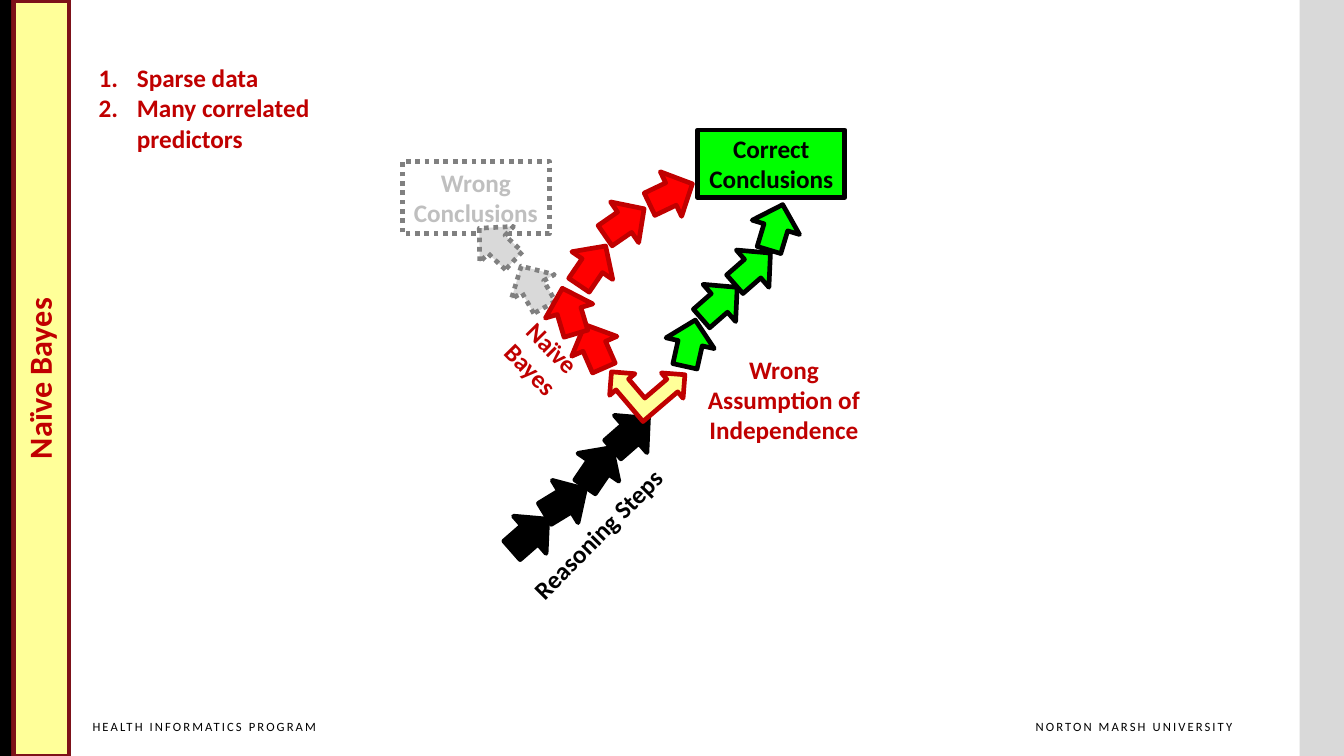
from lxml.etree import SubElement
from pptx import Presentation
from pptx.dml.color import RGBColor
from pptx.enum.dml import MSO_LINE
from pptx.enum.shapes import MSO_SHAPE as Shape
from pptx.enum.text import MSO_ANCHOR as Anchor, PP_ALIGN as Align
from pptx.oxml.ns import qn
from pptx.util import Inches, Pt

COLORS = {
    "black": "000000", "crimson": "C00000", "maroon": "7D1219",
    "red": "FF0000", "green": "00FF00", "cream": "FFFF99",
    "pale": "D9D9D9", "silver": "BFBFBF", "gray": "808080",
}


def color(name):
    return RGBColor.from_string(COLORS[name])


class ReasoningSlide:
    font = "Calibri"
    text_size = 18
    line_width = 3.35
    arrow_size = (0.47, 0.49)

    def __init__(self, presentation):
        self.slide = presentation.slides.add_slide(presentation.slide_layouts[5])

    def set_text(self, shape, text, ink, size=None, bold=True, align=Align.CENTER,
                 anchor=Anchor.MIDDLE, insets=(0.1, 0.05, 0.1, 0.05)):
        frame = shape.text_frame
        frame.text = text
        frame.word_wrap = True
        frame.vertical_anchor = anchor
        (frame.margin_left, frame.margin_top,
         frame.margin_right, frame.margin_bottom) = map(Inches, insets)
        for paragraph in frame.paragraphs:
            paragraph.alignment = align
            for run in paragraph.runs:
                run.font.name = self.font
                run.font.size = Pt(size or self.text_size)
                run.font.bold = bold
                run.font.color.rgb = color(ink)

    def paint(self, shape, fill=None, line=None, dotted=False):
        if fill:
            shape.fill.solid()
            shape.fill.fore_color.rgb = color(fill)
        else:
            shape.fill.background()
        if line:
            shape.line.color.rgb = color(line)
            shape.line.width = Pt(self.line_width)
            if dotted:
                shape.line.dash_style = MSO_LINE.ROUND_DOT
        else:
            shape.line.fill.background()

    def title(self, text, box, rotation):
        shape = self.slide.shapes.title
        shape.left, shape.top, shape.width, shape.height = map(Inches, box)
        shape.rotation = rotation
        self.paint(shape, "cream", "maroon")
        self.set_text(shape, text, "crimson", size=23, insets=(0.18,) * 4)
        shape.text_frame.paragraphs[0].line_spacing = 0.9

    def shape(self, kind, box, fill=None, line=None, dotted=False, rotation=0):
        shape = self.slide.shapes.add_shape(kind, *map(Inches, box))
        shape.shadow.inherit = False
        shape.rotation = rotation
        self.paint(shape, fill, line, dotted)
        return shape

    def arrows(self, steps, fill, line, dotted=False):
        for left, top, rotation in steps:
            self.shape(Shape.RIGHT_ARROW, (left, top, *self.arrow_size),
                       fill, line, dotted, rotation)

    def label(self, text, box, ink, rotation=0, **style):
        shape = self.slide.shapes.add_textbox(*map(Inches, box))
        shape.rotation = rotation
        self.set_text(shape, text, ink, **style)
        return shape

    def footer(self, text, box, align):
        shape = self.label(text, box, "black", size=9, bold=False, align=align,
                           anchor=Anchor.TOP, insets=(0.1, 0.05, 0, 0.05))
        for run in shape.text_frame.paragraphs[0].runs:
            run._r.get_or_add_rPr().set("spc", "150")

    def numbered_list(self, items, box, ink):
        shape = self.label("\n".join(items), box, ink, align=Align.LEFT)
        indent = Inches(0.38)
        for paragraph in shape.text_frame.paragraphs:
            properties = paragraph._p.get_or_add_pPr()
            properties.set("marL", str(indent))
            properties.set("indent", str(-indent))
            SubElement(properties, qn("a:buFont"), typeface="+mj-lt")
            SubElement(properties, qn("a:buAutoNum"), type="arabicPeriod")


def main():
    presentation = Presentation()
    presentation.slide_width = Inches(13.33)
    presentation.slide_height = Inches(7.5)
    page = ReasoningSlide(presentation)

    # Side bands, footers and vertical title
    page.shape(Shape.RECTANGLE, (12.89, 0, 0.44, 7.5), "pale")
    page.shape(Shape.RECTANGLE, (0, 0, 0.11, 7.5), "black")
    page.footer("NORTON MARSH UNIVERSITY", (9.87, 7.08, 2.35, 0.33), Align.RIGHT)
    page.footer("HEALTH INFORMATICS PROGRAM", (0.82, 7.08, 2.54, 0.33), Align.LEFT)
    page.title("Naïve Bayes", (-3.34, 3.48, 7.5, 0.55), 270)

    # Shared reasoning steps up to the fork
    page.label("Reasoning Steps", (4.43, 5.08, 2.99, 0.43), "black", 314.6)
    page.arrows([(5.02, 5.06, 318.8), (5.37, 4.73, 328.6),
                 (5.7, 4.39, 304.2), (6.02, 4.06, 318.8)], "black", "black")
    page.shape(Shape.LEFT_UP_ARROW, (6.09, 3.47, 0.66, 0.7),
               "cream", "crimson", rotation=49.5)

    # Conclusions
    correct = page.shape(Shape.RECTANGLE, (6.92, 1.29, 1.46, 0.67), "green", "black")
    page.set_text(correct, "Correct Conclusions", "black")
    wrong = page.shape(Shape.RECTANGLE, (3.99, 1.6, 1.46, 0.72),
                       line="gray", dotted=True)
    page.set_text(wrong, "Wrong Conclusions", "silver")

    # Paths: correct, abandoned and Naïve Bayes
    page.arrows([(6.61, 3.16, 282.6), (6.9, 2.76, 318.8),
                 (7.23, 2.42, 318.8), (7.46, 2.01, 286.8)], "green", "black")
    page.arrows([(5.05, 2.6, 240.5), (4.69, 2.18, 223.2)],
                "pale", "gray", dotted=True)
    page.arrows([(5.66, 3.19, 246.3), (5.41, 2.84, 253.4), (5.64, 2.39, 304.2),
                 (5.96, 1.96, 325.4), (6.42, 1.68, 334.5)], "red", "crimson")

    # Annotations
    page.label("Wrong Assumption of Independence", (6.74, 3.75, 2.07, 0.43), "crimson")
    page.numbered_list(["Sparse data", "Many correlated predictors"],
                       (0.88, 0.44, 2.8, 1.26), "crimson")
    page.label("Naïve\vBayes", (4.47, 3.34, 1.81, 0.43), "crimson", 45.5)

    presentation.save("out.pptx")


if __name__ == "__main__":
    main()
